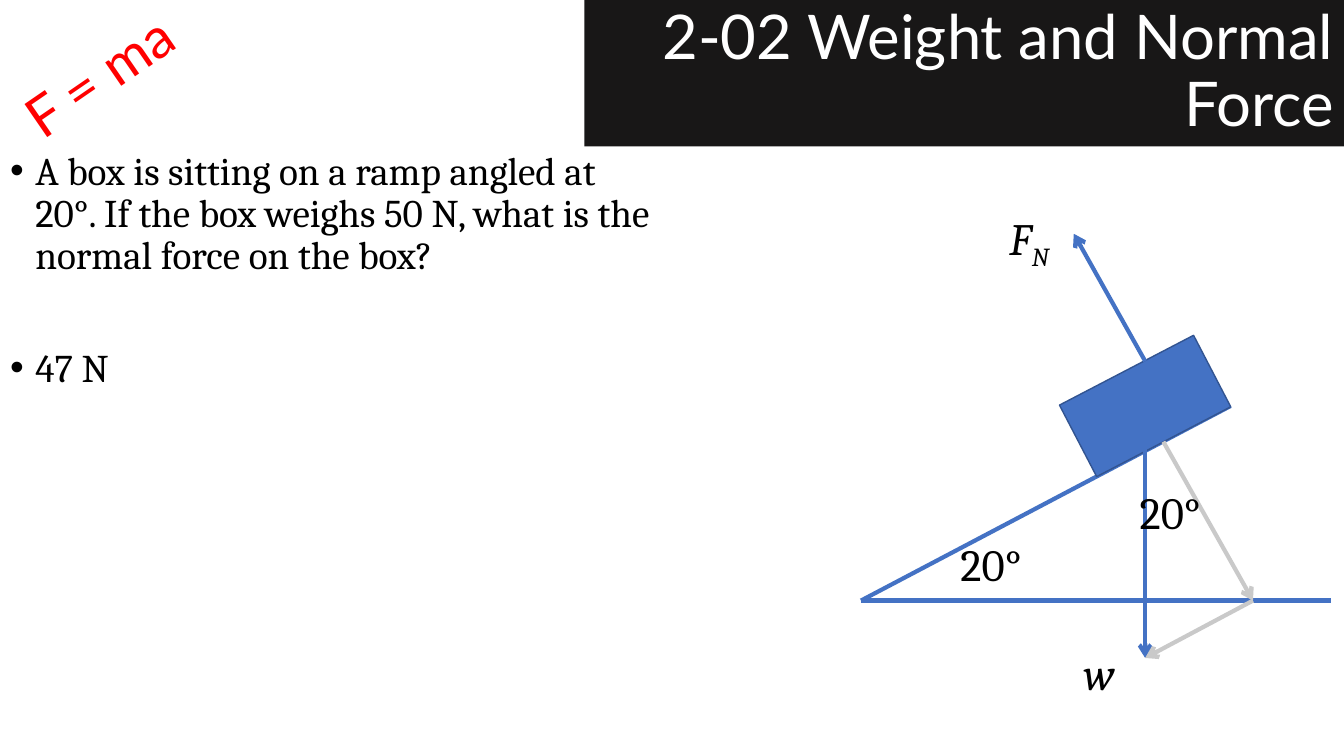
"""Builds a physics slide about the normal force on a box resting on a ramp."""
from pptx import Presentation
from pptx.dml.color import RGBColor
from pptx.enum import shapes, text
from pptx.oxml.ns import qn
from pptx.util import Pt
from lxml import etree

BLACK = RGBColor(0, 0, 0)
WHITE = RGBColor(255, 255, 255)
RED = RGBColor(255, 0, 0)
BANNER = RGBColor(0x18, 0x17, 0x17)
BLUE = RGBColor(0x44, 0x72, 0xC4)
DARK_BLUE = RGBColor(0x32, 0x54, 0x91)
GRAY = RGBColor(0xC9, 0xC9, 0xC9)


def add_line(parent, start, end, color, arrow):
    line = parent.add_connector(shapes.MSO_CONNECTOR.STRAIGHT, *map(Pt, start + end))
    line.line.color.rgb = color
    line.line.width = Pt(3)
    if arrow:
        etree.SubElement(line.line._get_or_add_ln(), qn("a:tailEnd"), type="arrow")
    etree.SubElement(line._element.spPr, qn("a:effectLst"))


def add_label(parent, wording, bounds, font_name, size, color):
    label = parent.add_textbox(*map(Pt, bounds))
    label.text_frame.word_wrap = True
    label.text_frame.text = wording
    font = label.text_frame.paragraphs[0].runs[0].font
    font.name, font.size, font.color.rgb = font_name, Pt(size), color
    return label


deck = Presentation()
deck.slide_width, deck.slide_height = Pt(960), Pt(540)
slide = deck.slides.add_slide(deck.slide_layouts[1])

heading = slide.shapes.title
heading.left, heading.top, heading.width, heading.height = map(Pt, (417.5, 0, 542.5, 104.5))
heading.fill.solid()
heading.fill.fore_color.rgb = BANNER
heading.text_frame.text = "2-02 Weight and Normal Force"
heading.text_frame.auto_size = text.MSO_AUTO_SIZE.NONE
heading.text_frame.vertical_anchor = text.MSO_ANCHOR.MIDDLE
heading_line = heading.text_frame.paragraphs[0]
heading_line.alignment = text.PP_ALIGN.RIGHT
heading_line.line_spacing = 0.9
heading_font = heading_line.runs[0].font
heading_font.name, heading_font.size, heading_font.color.rgb = "Lato", Pt(44), WHITE

problem = slide.placeholders[1]
problem.left, problem.top, problem.width, problem.height = map(Pt, (0, 104.5, 474, 407))
problem.text_frame.text = (
    "A box is sitting on a ramp angled at 20°. If the box weighs 50 N, "
    "what is the normal force on the box?\n47 N"
)
problem.text_frame.auto_size = text.MSO_AUTO_SIZE.NONE
for paragraph, gap in zip(problem.text_frame.paragraphs, (0, 50)):
    properties = paragraph._p.get_or_add_pPr()
    properties.set("marL", str(Pt(18)))
    properties.set("indent", str(Pt(-18)))
    etree.SubElement(properties, qn("a:buFont"), typeface="Arial")
    etree.SubElement(properties, qn("a:buChar"), char="•")
    paragraph.line_spacing = 0.9
    paragraph.space_before = Pt(gap)
    font = paragraph.runs[0].font
    font.name, font.size, font.color.rgb = "Cambria", Pt(28), BLACK

diagram = slide.shapes.add_group_shape().shapes
ramp_foot = (615, 429)
box_center = (818, 290)
weight_tip = (818, 470)
component_tip = (895, 429)

add_line(diagram, ramp_foot, (951, 429), BLUE, False)
add_line(diagram, ramp_foot, (879, 290), BLUE, False)

box_width, box_height = 108, 57.6
box = diagram.add_shape(
    shapes.MSO_SHAPE.RECTANGLE,
    Pt(box_center[0] - box_width / 2), Pt(box_center[1] - box_height / 2),
    Pt(box_width), Pt(box_height),
)
box.rotation = 332.5
box.shadow.inherit = False
box.fill.solid()
box.fill.fore_color.rgb = BLUE
box.line.color.rgb = DARK_BLUE
box.line.width = Pt(1)

for start, end, color in (
    ((818, 314.5), weight_tip, BLUE),
    ((818, 258), (767, 167), BLUE),
    ((831, 315.5), component_tip, GRAY),
    (component_tip, weight_tip, GRAY),
):
    add_line(diagram, start, end, color, True)

for left, top in ((679, 380), (807, 343)):
    add_label(diagram, "20°", (left, top, 88, 46), "Cambria", 32, BLACK)

weight = add_label(diagram, "w", (767, 458, 38, 46), "Cambria", 32, BLACK)
weight.text_frame.paragraphs[0].runs[0].font.italic = True

normal = add_label(diagram, "F", (714, 147, 64, 46), "Cambria", 32, BLACK)
normal_line = normal.text_frame.paragraphs[0]
normal_line.add_run().text = "N"
for run in normal_line.runs:
    run.font.name, run.font.size, run.font.italic = "Cambria", Pt(32), True
    run.font.color.rgb = BLACK
normal_line.runs[1].font._element.set("baseline", "-25000")

second_law = add_label(slide.shapes, "F = ma", (1.5, 16.5, 166, 55.5), "Lato", 40, RED)
second_law.rotation = 325.5

deck.save("out.pptx")
